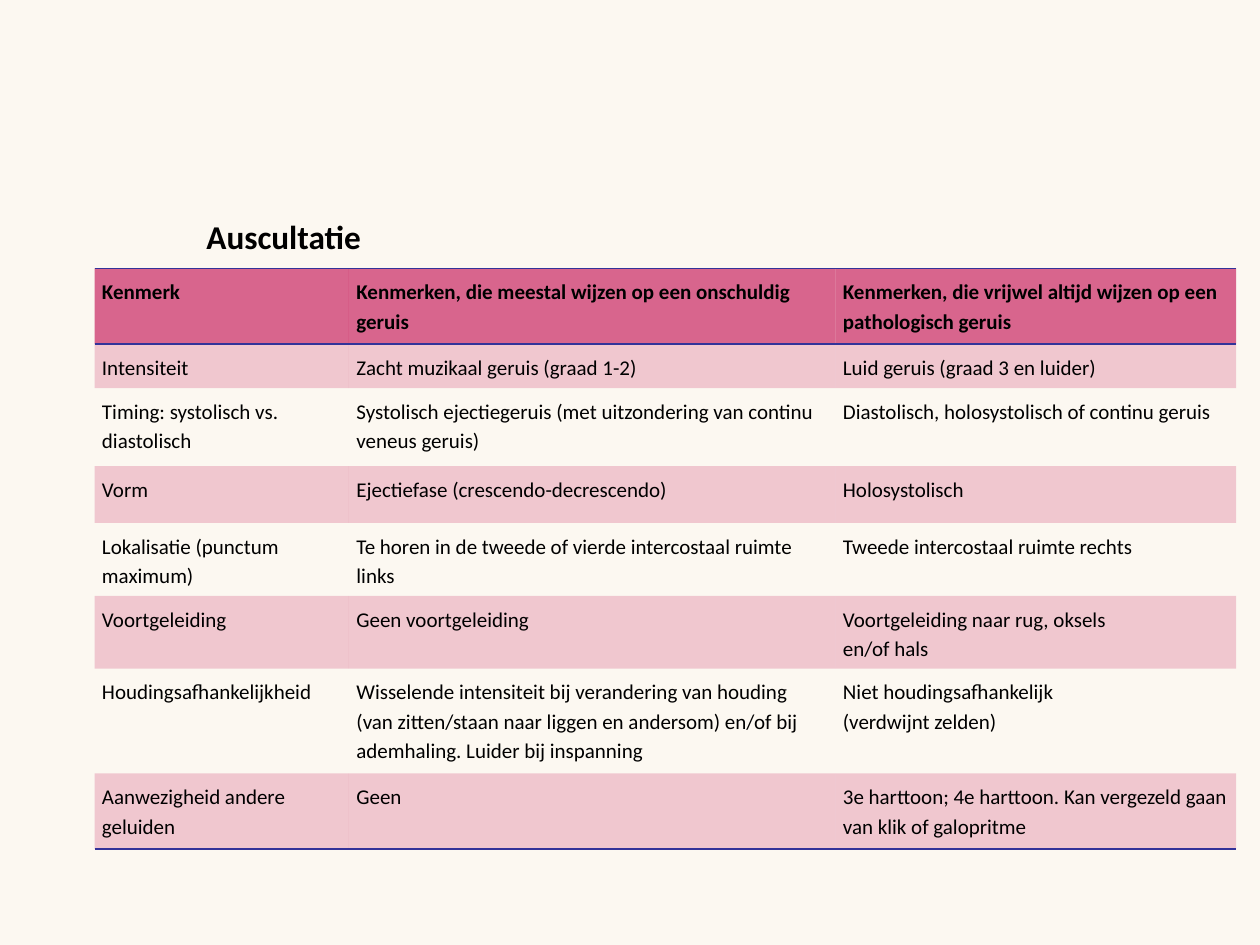
"""Build the slide with the table of heart murmur features."""
from lxml import etree
from pptx import Presentation
from pptx.dml.color import RGBColor
from pptx.enum.text import MSO_ANCHOR
from pptx.oxml import parse_xml
from pptx.oxml.ns import nsdecls, qn
from pptx.util import Pt

TOP = MSO_ANCHOR.TOP
NO_STYLE = "{2D5ABB26-0587-4C30-8999-92F81FD0307C}"
COLORS = {"bg": "FCF8F1", "text": "000000", "fill": "C1034B", "line": "333399"}
TITLE_FONT = {"name": "Calibri", "size": Pt(19), "bold": True}
CELL_FONT = {"name": "Calibri", "size": Pt(12)}
COL_WIDTHS = [145.4, 278, 229]
ROW_HEIGHTS = [43.2, 20.2, 44.6, 32.4, 38.9, 31.7, 59.8, 43.2]
ROWS = [
    ["Kenmerk",
     "Kenmerken, die meestal wijzen op een onschuldig geruis",
     "Kenmerken, die vrijwel altijd wijzen op een pathologisch geruis"],
    ["Intensiteit",
     "Zacht muzikaal geruis (graad 1-2)",
     "Luid geruis (graad 3 en luider)"],
    ["Timing: systolisch vs. diastolisch",
     "Systolisch ejectiegeruis (met uitzondering van continu veneus geruis)",
     "Diastolisch, holosystolisch of continu geruis"],
    ["Vorm",
     "Ejectiefase (crescendo-decrescendo)",
     "Holosystolisch"],
    ["Lokalisatie (punctum maximum)",
     "Te horen in de tweede of vierde intercostaal ruimte links",
     "Tweede intercostaal ruimte rechts"],
    ["Voortgeleiding",
     "Geen voortgeleiding",
     "Voortgeleiding naar rug, oksels\nen/of hals"],
    ["Houdingsafhankelijkheid",
     "Wisselende intensiteit bij verandering van houding (van zitten/staan "
     "naar liggen en andersom) en/of bij ademhaling. Luider bij inspanning",
     "Niet houdingsafhankelijk\n(verdwijnt zelden)"],
    ["Aanwezigheid andere geluiden",
     "Geen",
     "3e harttoon; 4e harttoon. Kan vergezeld gaan van klik of galopritme"],
]


def set_font(font, values):
    for name, value in values.items():
        setattr(font, name, value)
    font.color.rgb = RGBColor.from_string(COLORS["text"])


def add_border(cell, side):
    cell._tc.get_or_add_tcPr().append(parse_xml(
        f'<a:{side} {nsdecls("a")} w="12700"><a:solidFill>'
        f'<a:srgbClr val="{COLORS["line"]}"/></a:solidFill></a:{side}>'))


prs = Presentation()
prs.slide_width, prs.slide_height = Pt(720), Pt(540)
s = prs.slides.add_slide(prs.slide_layouts[6])
s.background.fill.solid()
s.background.fill.fore_color.rgb = RGBColor.from_string(COLORS["bg"])

title = s.shapes.add_textbox(Pt(110.9), Pt(116.6), Pt(562.3), Pt(32.4))
tf = title.text_frame
tf.word_wrap = True
tf.vertical_anchor = TOP
for side in ("left", "right", "top", "bottom"):
    setattr(tf, f"margin_{side}", Pt(7.2))
tf.text = "Auscultatie"
set_font(tf.paragraphs[0].runs[0].font, TITLE_FONT)

sp = s.shapes.add_table(len(ROWS), len(COL_WIDTHS), Pt(54), Pt(153.4),
                        Pt(sum(COL_WIDTHS)), Pt(sum(ROW_HEIGHTS)))
table = sp.table
table.first_row = table.horz_banding = False
next(sp._element.iter(qn("a:tableStyleId"))).text = NO_STYLE
for col, width in zip(table.columns, COL_WIDTHS):
    col.width = Pt(width)

last = len(ROWS) - 1
for i, texts in enumerate(ROWS):
    table.rows[i].height = Pt(ROW_HEIGHTS[i])
    for j, text in enumerate(texts):
        cell = table.cell(i, j)
        cell.vertical_anchor = TOP
        for side in ("left", "right", "top", "bottom"):
            setattr(cell, f"margin_{side}", Pt(4.3))
        cell.text = text
        for p in cell.text_frame.paragraphs:
            p.line_spacing = 1.15
            set_font(p.runs[0].font, {**CELL_FONT, "bold": i == 0})
        if i == 0:
            add_border(cell, "lnT")
        if i in (0, last):
            add_border(cell, "lnB")
        if i == 0 or i % 2:
            cell.fill.solid()
            cell.fill.fore_color.rgb = RGBColor.from_string(COLORS["fill"])
            clr = cell._tc.tcPr.find(f'{qn("a:solidFill")}/{qn("a:srgbClr")}')
            etree.SubElement(clr, qn("a:alpha"), val="20000" if i else "60000")
        else:
            cell.fill.background()

prs.save("out.pptx")
